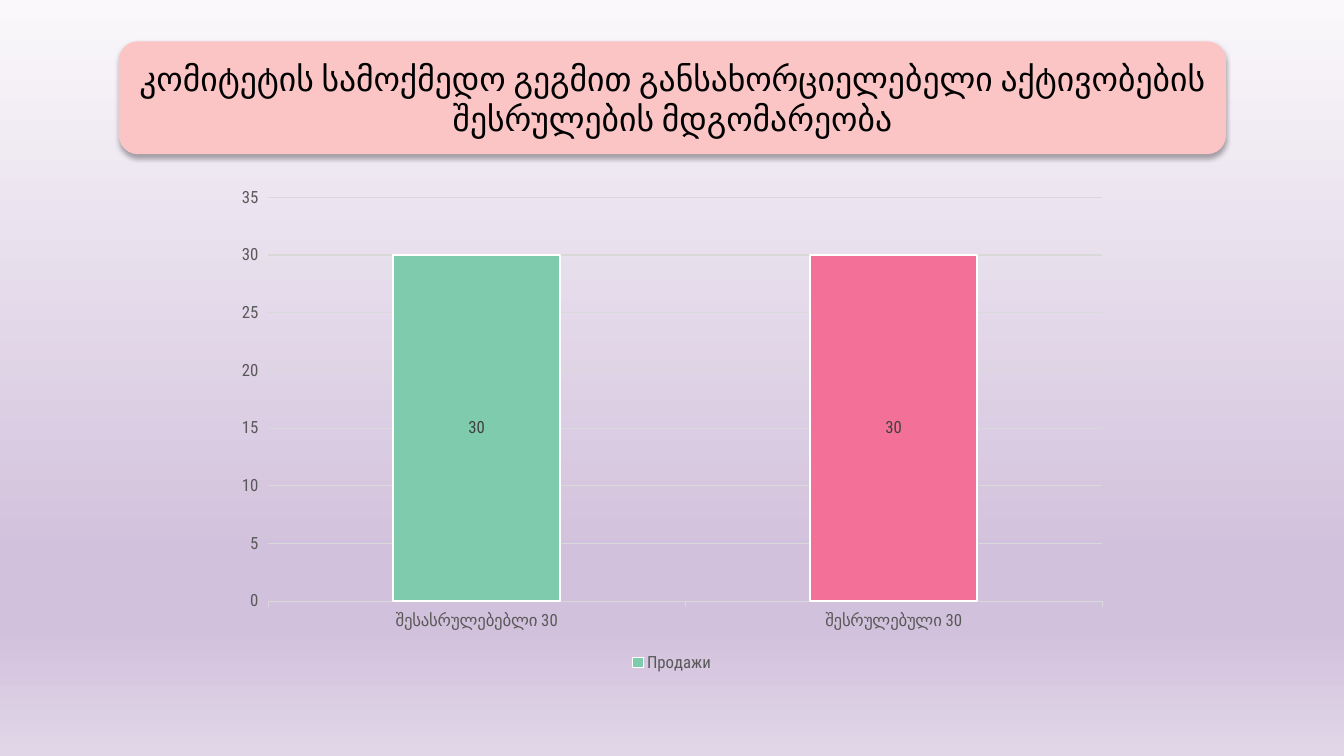
from lxml import etree
from pptx import Presentation
from pptx.chart.data import CategoryChartData
from pptx.dml.color import RGBColor
from pptx.enum.chart import XL_CHART_TYPE, XL_LABEL_POSITION, XL_LEGEND_POSITION, XL_TICK_MARK
from pptx.enum.shapes import MSO_SHAPE
from pptx.enum.text import MSO_ANCHOR, MSO_AUTO_SIZE, PP_ALIGN
from pptx.oxml.ns import qn
from pptx.util import Inches, Pt

STACKED = XL_CHART_TYPE.COLUMN_STACKED
CENTER = XL_LABEL_POSITION.CENTER
BOTTOM = XL_LEGEND_POSITION.BOTTOM
OUTSIDE = XL_TICK_MARK.OUTSIDE
ROUNDED = MSO_SHAPE.ROUNDED_RECTANGLE
MIDDLE = MSO_ANCHOR.MIDDLE
NO_FIT = MSO_AUTO_SIZE.NONE
MID_TEXT = PP_ALIGN.CENTER

FONT = "Roboto Condensed"
COLORS = {
    "text": "000000", "axis": "595959", "label": "404040", "grid": "D9D9D9",
    "card": "FBC5C5", "plan": "7FCBAE", "done": "F37199", "edge": "FFFFFF",
    "top": "FAF8FB", "lilac": "D2C1DC", "base": "E1D6E8",
}


def rgb(name):
    return RGBColor.from_string(COLORS[name])


def style(font, size, color):
    font.name = FONT
    font.size = Pt(size)
    font.bold = False
    font.color.rgb = rgb(color)


def write(frame, text, size=12, color="text", align=MID_TEXT, anchor=MIDDLE):
    frame.word_wrap = True
    frame.auto_size = NO_FIT
    frame.vertical_anchor = anchor
    para = frame.paragraphs[0]
    para.alignment = align
    run = para.add_run()
    run.text = text
    style(run.font, size, color)


def stroke(line, color, width):
    line.color.rgb = rgb(color)
    line.width = Pt(width)


class Deck:
    def __init__(self):
        self.prs = Presentation()
        self.prs.slide_width = Inches(13.33)
        self.prs.slide_height = Inches(7.5)
        self.slide = self.prs.slides.add_slide(self.prs.slide_layouts[5])

    def backdrop(self, stops):
        fill = self.slide.background.fill
        fill.gradient()
        fill.gradient_angle = 270
        ramp = self.slide.element.find(".//" + qn("a:gsLst"))
        for old in list(ramp):
            ramp.remove(old)
        for pos, color in stops:
            stop = etree.SubElement(ramp, qn("a:gs"), pos=str(pos * 1000))
            etree.SubElement(stop, qn("a:srgbClr"), val=COLORS[color])

    def card(self, box, color):
        shape = self.slide.shapes.add_shape(ROUNDED, *map(Inches, box))
        shape.fill.solid()
        shape.fill.fore_color.rgb = rgb(color)
        shape.line.fill.background()
        # Soft shadow below the card
        shape.shadow.inherit = False
        effects = shape.element.spPr.find(qn("a:effectLst"))
        shade = etree.SubElement(
            effects, qn("a:outerShdw"), blurRad=str(Pt(3.5)),
            dist=str(Pt(2.2)), dir="5400000", algn="ctr", rotWithShape="0")
        tone = etree.SubElement(shade, qn("a:srgbClr"), val=COLORS["text"])
        etree.SubElement(tone, qn("a:alpha"), val="32000")

    def title(self, box, text, size):
        title = self.slide.shapes.title
        title.left, title.top, title.width, title.height = map(Inches, box)
        write(title.text_frame, text, size=size)
        # Bring the title in front of its card
        tree = title.element.getparent()
        tree.append(title.element)

    def chart(self, box, name, bars):
        data = CategoryChartData()
        data.categories = [label for label, _, _ in bars]
        data.add_series(name, [value for _, value, _ in bars])
        frame = self.slide.shapes.add_chart(STACKED, *map(Inches, box), data)
        chart = frame.chart
        style(chart.font, 10, "text")
        chart.has_title = False
        chart.has_legend = True
        chart.legend.position = BOTTOM
        chart.legend.include_in_layout = False
        style(chart.legend.font, 12, "axis")

        # Axes
        for axis in (chart.category_axis, chart.value_axis):
            axis.major_tick_mark = OUTSIDE
            style(axis.tick_labels.font, 12, "axis")
        stroke(chart.category_axis.format.line, "grid", 0.75)
        scale = chart.value_axis
        scale.minimum_scale, scale.maximum_scale, scale.major_unit = 0, 35, 5
        scale.format.line.fill.background()
        stroke(scale.major_gridlines.format.line, "grid", 0.75)

        # Bars and their values
        plot = chart.plots[0]
        plot.vary_by_categories = False
        plot.gap_width, plot.overlap = 150, 100
        series = plot.series[0]
        first = bars[0][2]
        series.format.fill.solid()
        series.format.fill.fore_color.rgb = rgb(first)
        stroke(series.format.line, "edge", 1.5)
        for i, (_, _, color) in enumerate(bars):
            if color != first:
                look = series.points[i].format
                look.fill.solid()
                look.fill.fore_color.rgb = rgb(color)
                stroke(look.line, "edge", 1.5)
        labels = series.data_labels
        labels.show_value = True
        labels.position = CENTER
        style(labels.font, 12, "label")


def main():
    deck = Deck()
    deck.backdrop([(0, "top"), (74, "lilac"), (83, "lilac"), (100, "base")])

    # Heading
    head = (1.18, 0.41, 10.98, 1.12)
    deck.card(head, "card")
    deck.title(head, "კომიტეტის სამოქმედო გეგმით განსახორციელებელი "
                     "აქტივობების შესრულების მდგომარეობა", 24)

    # Planned and completed activities
    deck.chart((2.22, 1.76, 8.89, 4.95), "Продажи", [
        ("შესასრულებებლი 30", 30, "plan"),
        ("შესრულებული 30", 30, "done"),
    ])
    deck.prs.save("out.pptx")


if __name__ == "__main__":
    main()
